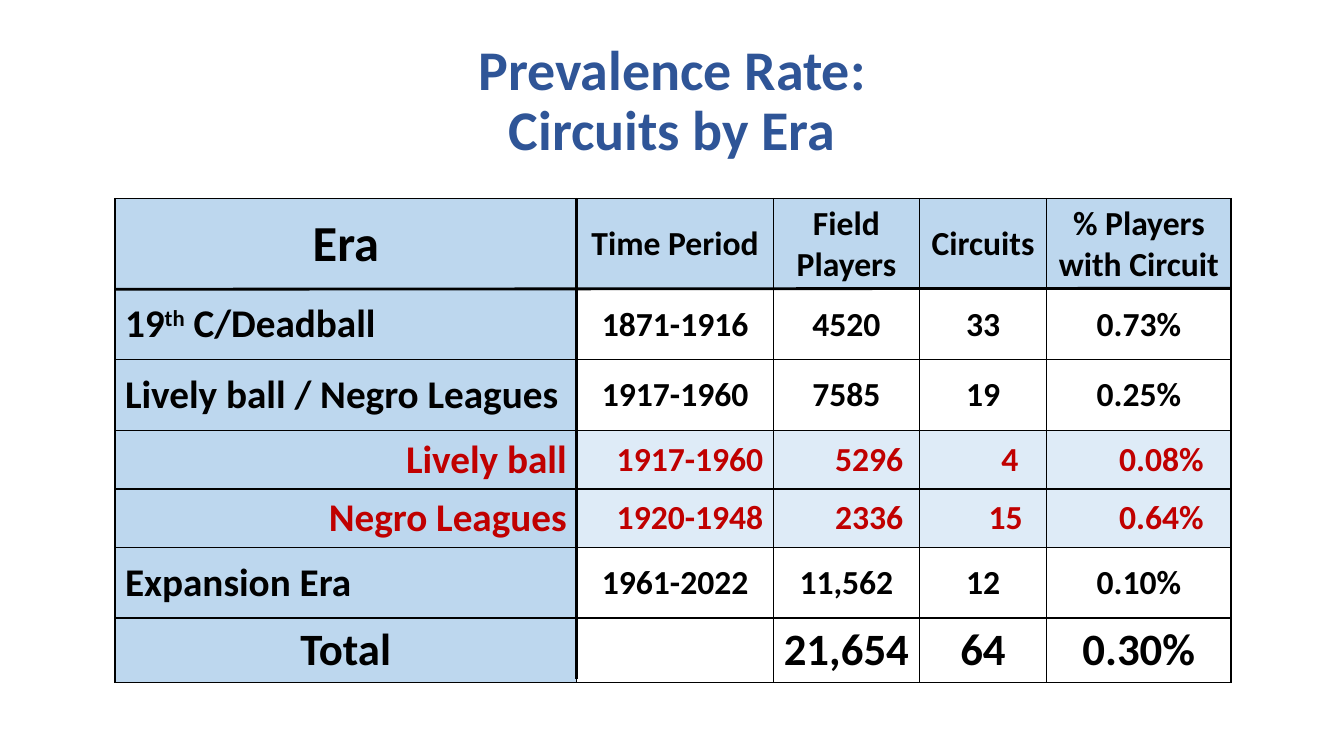
"""Build a slide with a table of circuit prevalence by baseball era."""
import pptx
import pptx.dml.color
import pptx.enum.shapes
import pptx.enum.text
import pptx.oxml.ns
import pptx.util
from lxml import etree

Inches = pptx.util.Inches
Align = pptx.enum.text.PP_ALIGN
Middle = pptx.enum.text.MSO_ANCHOR.MIDDLE

THEME = {
    "font": "Calibri",
    "title": "2F5597", "ink": "000000", "accent": "C00000",
    "label_fill": "BDD7EE", "detail_fill": "DEEBF7",
    "title_size": 40, "era_size": 36, "total_size": 32,
    "label_size": 28, "value_size": 24,
}


def add_span(para, text, size, color):
    """Add one bold run to a paragraph."""
    span = para.add_run()
    span.text = text
    span.font.name = THEME["font"]
    span.font.size = pptx.util.Pt(size)
    span.font.bold = True
    span.font.color.rgb = pptx.dml.color.RGBColor.from_string(color)
    return span


def add_borders(cell):
    """Draw a thin line on all four sides of a cell."""
    properties = cell._tc.get_or_add_tcPr()
    for side in ("lnL", "lnR", "lnT", "lnB"):
        line = etree.SubElement(properties, pptx.oxml.ns.qn(f"a:{side}"), w="12700")
        fill = etree.SubElement(line, pptx.oxml.ns.qn("a:solidFill"))
        etree.SubElement(fill, pptx.oxml.ns.qn("a:srgbClr"), val=THEME["ink"])


deck = pptx.Presentation()
deck.slide_width, deck.slide_height = Inches(13.33), Inches(7.5)
page = deck.slides.add_slide(deck.slide_layouts[6])

title = page.shapes.add_textbox(Inches(3.6), Inches(0.37), Inches(6.13), Inches(1.29))
title.text_frame.word_wrap = True
title.text_frame.vertical_anchor = Middle
para = title.text_frame.paragraphs[0]
para.alignment = Align.CENTER
para.line_spacing = 0.9
add_span(para, "Prevalence Rate:", THEME["title_size"], THEME["title"])
para.add_line_break()
add_span(para, "Circuits by Era", THEME["title_size"], THEME["title"])

ROWS = [
    ("header", 0.9, ["Era", "Time Period", "Field Players", "Circuits", "% Players with Circuit"]),
    ("era", 0.7, ["19^th^ C/Deadball", "1871-1916", "4520", "33", "0.73%"]),
    ("era", 0.7, ["Lively ball / Negro Leagues", "1917-1960", "7585", "19", "0.25%"]),
    ("detail", 0.58, ["Lively ball", "1917-1960", "5296", "4", "0.08%"]),
    ("detail", 0.58, ["Negro Leagues", "1920-1948", "2336", "15", "0.64%"]),
    ("era", 0.7, ["Expansion Era", "1961-2022", "11,562", "12", "0.10%"]),
    ("total", 0.64, ["Total", "", "21,654", "64", "0.30%"]),
]
COLUMN_WIDTHS = [4.58, 1.95, 1.45, 1.26, 1.83]
LEFT, TOP = 1.14, 1.97
WIDTH, HEIGHT = sum(COLUMN_WIDTHS), sum(height for _, height, _ in ROWS)
LABEL_SIZES = {"header": THEME["era_size"], "total": THEME["total_size"]}
TEXT_ALIGNS = {"era": Align.LEFT, "detail": Align.RIGHT}

table = page.shapes.add_table(
    len(ROWS), len(COLUMN_WIDTHS), Inches(LEFT), Inches(TOP), Inches(WIDTH), Inches(HEIGHT)
).table
table.first_row = table.horz_banding = False
for column, width in zip(table.columns, COLUMN_WIDTHS):
    column.width = Inches(width)

for row_index, (kind, height, texts) in enumerate(ROWS):
    table.rows[row_index].height = Inches(height)
    for column_index, text in enumerate(texts):
        cell = table.cell(row_index, column_index)
        add_borders(cell)
        cell.vertical_anchor = Middle
        if column_index == 0 or kind == "header":
            fill = THEME["label_fill"]
        else:
            fill = THEME["detail_fill"] if kind == "detail" else None
        if fill:
            cell.fill.solid()
            cell.fill.fore_color.rgb = pptx.dml.color.RGBColor.from_string(fill)
        else:
            cell.fill.background()

        para = cell.text_frame.paragraphs[0]
        if column_index < 2:
            para.alignment = TEXT_ALIGNS.get(kind, Align.CENTER)
            if column_index == 1 and kind == "era":
                cell.margin_left = Inches(0.25)
        else:
            para.alignment = Align.CENTER
            cell.margin_right = Inches(0.08)
            indent = 0.45 if kind == "detail" else 0
            cell.margin_left = Inches(0.08 + indent + (0.08 if text == "4" else 0))

        if column_index == 0:
            size = LABEL_SIZES.get(kind, THEME["label_size"])
        else:
            size = THEME["total_size"] if kind == "total" else THEME["value_size"]
        color = THEME["accent"] if kind == "detail" else THEME["ink"]
        for part_index, part in enumerate(text.split("^")):
            if part:
                span = add_span(para, part, size, color)
                if part_index == 1:
                    span.font._element.set("baseline", "30000")

divider = LEFT + COLUMN_WIDTHS[0]
header_bottom = TOP + ROWS[0][1]
for start_x, start_y, end_x, end_y in [
    (divider, TOP, divider, 6.74),
    (LEFT, header_bottom, LEFT + WIDTH, header_bottom - 0.01),
]:
    rule = page.shapes.add_connector(
        pptx.enum.shapes.MSO_CONNECTOR.STRAIGHT,
        Inches(start_x), Inches(start_y), Inches(end_x), Inches(end_y),
    )
    rule.line.width = pptx.util.Pt(2)
    rule.line.color.rgb = pptx.dml.color.RGBColor.from_string(THEME["ink"])
    etree.SubElement(rule._element.spPr, pptx.oxml.ns.qn("a:effectLst"))

deck.save("out.pptx")
